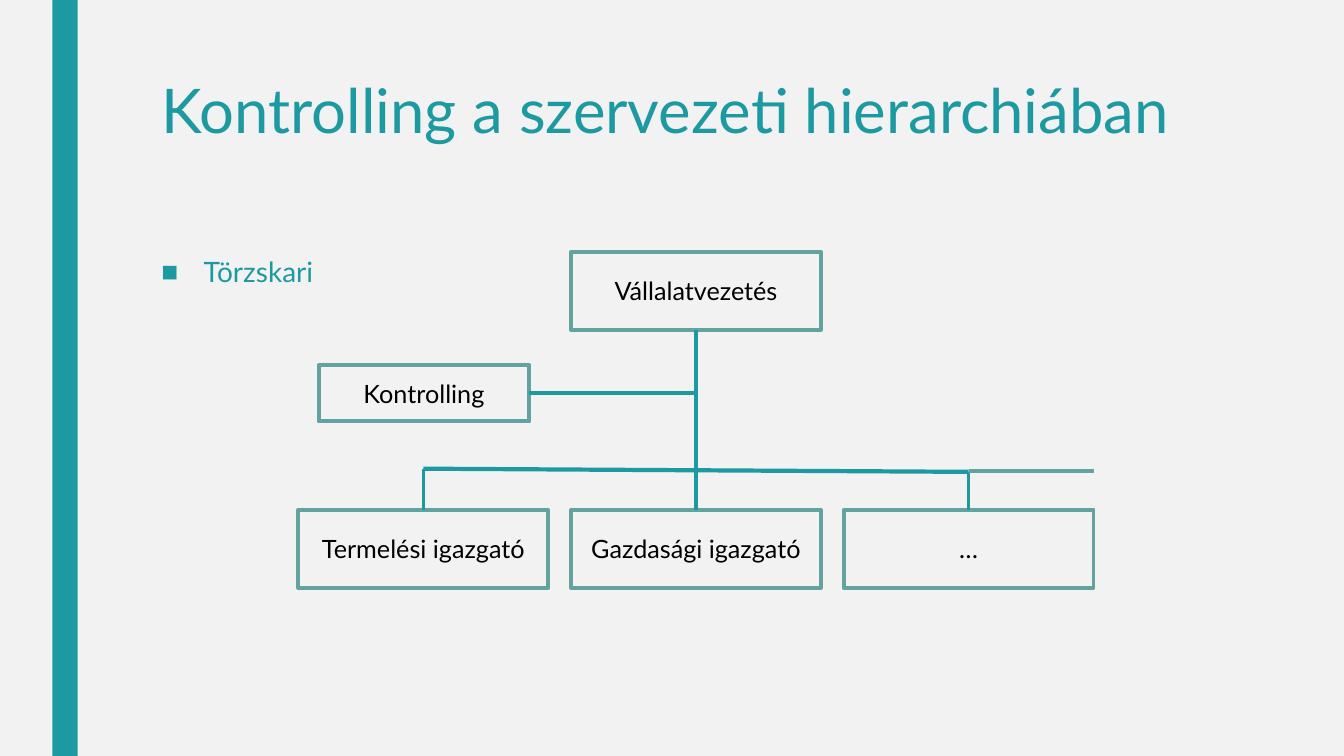
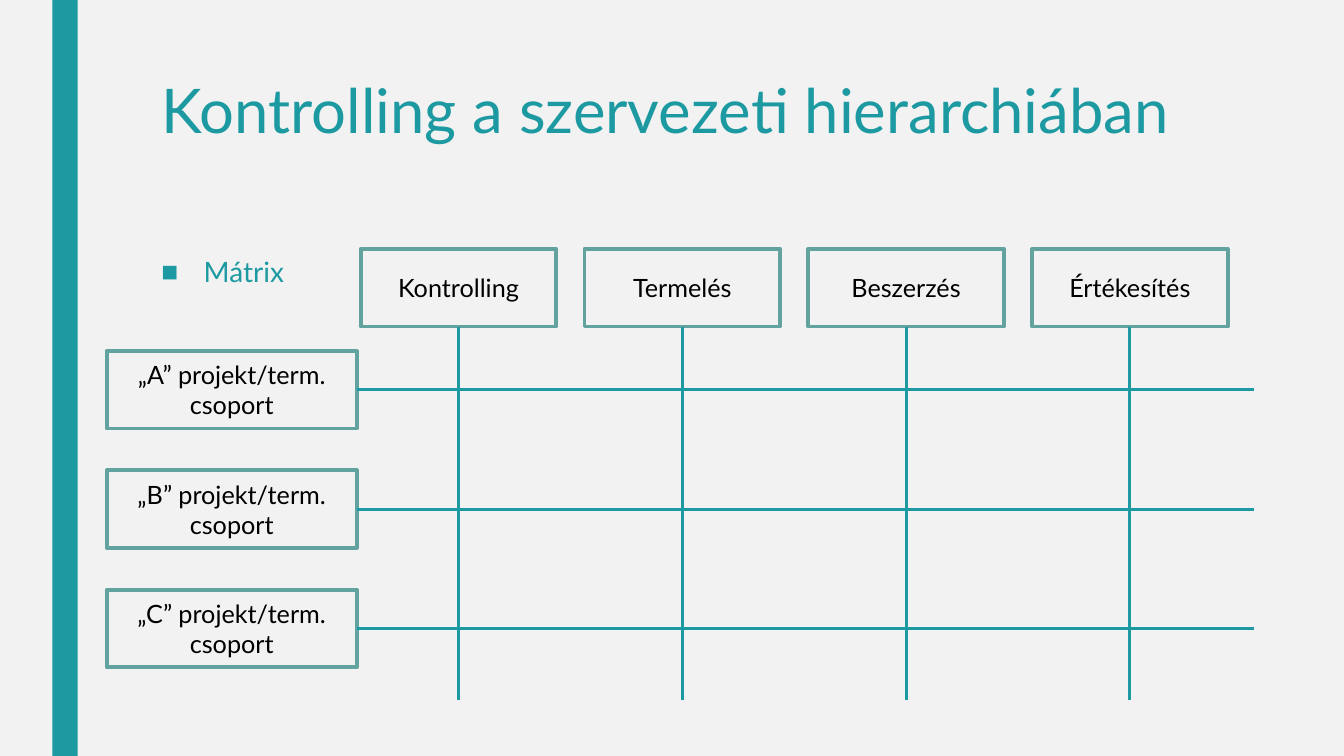
from dataclasses import dataclass

import lxml.etree
import pptx
import pptx.dml.color
import pptx.enum.shapes
import pptx.enum.text
import pptx.oxml.ns
import pptx.util

Cm = pptx.util.Cm
Pt = pptx.util.Pt
ANCHOR = pptx.enum.text.MSO_ANCHOR
ALIGN = pptx.enum.text.PP_ALIGN
TOP, BOTTOM, RIGHT = 0, 2, 3


@dataclass(frozen=True)
class Theme:
    font: str = "Lato"
    background: str = "F2F2F2"
    accent: str = "1D9AA1"
    outline: str = "62A39F"
    ink: str = "000000"
    title_size: float = 44
    body_size: float = 20
    box_size: float = 18
    outline_width: float = 2.75
    trunk_width: float = 3
    branch_width: float = 2.25


THEME = Theme()

TITLE = "Kontrolling a szervezeti hierarchiában"
TITLE_AREA = (3.81, 1.9, 26.67, 4.11)
BODY_AREA = (3.81, 6.35, 26.67, 9.95)
BAND_AREA = (1.32, 0, 0.64, 19.05)
BOX_WIDTH, BOX_HEIGHT = 6.3, 1.96

STAFF = {
    "bullet": "Törzskari",
    "head": ("Vállalatvezetés", (14.39, 6.35, BOX_WIDTH, BOX_HEIGHT)),
    "staff": ("Kontrolling", (8.03, 9.2, 5.31, 1.42)),
    "directors": ["Termelési igazgató", "Gazdasági igazgató", "…"],
    "left": 7.52, "top": 12.85, "pitch": 6.87,
    "bus": ((10.67, 11.81), (24.41, 11.89)),
    "stub": ((24.41, 11.86), (27.56, 11.86)),
}

MATRIX = {
    "bullet": "Mátrix",
    "bullet_area": (3.81, 6.35, 4.8, 1.45),
    "functions": ["Kontrolling", "Termelés", "Beszerzés", "Értékesítés"],
    "function_left": 9.09, "function_top": 6.27,
    "function_pitch": 5.64, "function_width": 4.93,
    "projects": [f"„{letter}” projekt/term. csoport" for letter in "ABC"],
    "project_left": 2.69, "project_top": 8.84, "project_pitch": 3.01,
    "right": 31.6, "bottom": 17.65,
}


def rgb(value):
    return pptx.dml.color.RGBColor.from_string(value)


def place(part, area):
    part.left, part.top, part.width, part.height = (Cm(v) for v in area)


def style_font(paragraph, size, color):
    paragraph.font.name = THEME.font
    paragraph.font.size = Pt(size)
    paragraph.font.color.rgb = rgb(color)


def add_rectangle(slide, area):
    rectangle = slide.shapes.add_shape(
        pptx.enum.shapes.MSO_SHAPE.RECTANGLE, *(Cm(v) for v in area))
    rectangle.shadow.inherit = False
    return rectangle


def add_unit(slide, label, area):
    unit = add_rectangle(slide, area)
    unit.fill.background()
    unit.line.color.rgb = rgb(THEME.outline)
    unit.line.width = Pt(THEME.outline_width)
    frame = unit.text_frame
    frame.word_wrap = True
    frame.vertical_anchor = ANCHOR.MIDDLE
    frame.text = label
    frame.paragraphs[0].alignment = ALIGN.CENTER
    style_font(frame.paragraphs[0], THEME.box_size, THEME.ink)
    return unit


def site(unit, side):
    x, y = {TOP: (0.5, 0), BOTTOM: (0.5, 1), RIGHT: (1, 0.5)}[side]
    return (pptx.util.Emu(unit.left + int(unit.width * x)).cm,
            pptx.util.Emu(unit.top + int(unit.height * y)).cm)


def add_link(slide, start, end, width, color=THEME.accent, begin=None, finish=None):
    link = slide.shapes.add_connector(
        pptx.enum.shapes.MSO_CONNECTOR.STRAIGHT, *(Cm(v) for v in (*start, *end)))
    if begin:
        link.begin_connect(*begin)
    if finish:
        link.end_connect(*finish)
    link.line.color.rgb = rgb(color)
    link.line.width = Pt(width)
    lxml.etree.SubElement(link.element.spPr, pptx.oxml.ns.qn("a:effectLst"))


def add_bullet(paragraph):
    qn = pptx.oxml.ns.qn
    properties = paragraph._p.get_or_add_pPr()
    properties.set("marL", str(Cm(1.07)))
    properties.set("indent", str(-Cm(1.07)))
    color = lxml.etree.SubElement(properties, qn("a:buClr"))
    lxml.etree.SubElement(color, qn("a:srgbClr"), val=THEME.accent)
    lxml.etree.SubElement(properties, qn("a:buFont"), typeface="Arial")
    lxml.etree.SubElement(properties, qn("a:buChar"), char="■")


def prepare_layout(prs):
    background = prs.slide_master.background.fill
    background.solid()
    background.fore_color.rgb = rgb(THEME.background)
    layout = prs.slide_layouts[1]
    title, body = list(layout.placeholders)[:2]
    for part, area in ((title, TITLE_AREA), (body, BODY_AREA)):
        place(part, area)
        part.text_frame.vertical_anchor = ANCHOR.TOP
    return layout


def move_band_to_master(prs, slide):
    band = add_rectangle(slide, BAND_AREA)
    band.fill.solid()
    band.fill.fore_color.rgb = rgb(THEME.accent)
    band.line.fill.background()
    band.element.nvSpPr.cNvPr.set("id", "20")
    prs.slide_master.element.cSld.spTree.insert(2, band.element)


def add_slide(prs, layout, bullet, bullet_area=None):
    slide = prs.slides.add_slide(layout)
    title, body = slide.shapes.title, slide.placeholders[1]
    if bullet_area:
        place(body, bullet_area)
    for part, text in ((title, TITLE), (body, bullet)):
        part.text_frame.text = text
        part.text_frame.auto_size = pptx.enum.text.MSO_AUTO_SIZE.NONE
    heading, item = title.text_frame.paragraphs[0], body.text_frame.paragraphs[0]
    heading.alignment = ALIGN.LEFT
    heading.line_spacing = 0.89
    style_font(heading, THEME.title_size, THEME.accent)
    item.line_spacing = 0.94
    item.space_before = Pt(10)
    item.space_after = Pt(2)
    add_bullet(item)
    style_font(item, THEME.body_size, THEME.accent)
    return slide


def build_staff(slide):
    head = add_unit(slide, *STAFF["head"])
    staff = add_unit(slide, *STAFF["staff"])
    production, finance, other = [
        add_unit(slide, label, (STAFF["left"] + i * STAFF["pitch"], STAFF["top"],
                                BOX_WIDTH, BOX_HEIGHT))
        for i, label in enumerate(STAFF["directors"])]
    trunk_x = site(head, BOTTOM)[0]
    staff_end = site(staff, RIGHT)
    add_link(slide, site(head, BOTTOM), site(finance, TOP), THEME.trunk_width,
             begin=(head, BOTTOM), finish=(finance, TOP))
    add_link(slide, staff_end, (trunk_x, staff_end[1]), THEME.trunk_width,
             begin=(staff, RIGHT))
    add_link(slide, *STAFF["bus"], THEME.trunk_width)
    for director, bus_end in zip((production, other), STAFF["bus"]):
        target = site(director, TOP)
        add_link(slide, (target[0], bus_end[1]), target, THEME.branch_width,
                 finish=(director, TOP))
    add_link(slide, *STAFF["stub"], THEME.outline_width, THEME.outline)


def build_matrix(slide):
    for i, label in enumerate(MATRIX["functions"]):
        left = MATRIX["function_left"] + i * MATRIX["function_pitch"]
        unit = add_unit(slide, label, (left, MATRIX["function_top"],
                                       MATRIX["function_width"], BOX_HEIGHT))
        start = site(unit, BOTTOM)
        add_link(slide, start, (start[0], MATRIX["bottom"]), THEME.branch_width,
                 begin=(unit, BOTTOM))
    for i, label in enumerate(MATRIX["projects"]):
        top = MATRIX["project_top"] + i * MATRIX["project_pitch"]
        unit = add_unit(slide, label, (MATRIX["project_left"], top,
                                       BOX_WIDTH, BOX_HEIGHT))
        start = site(unit, RIGHT)
        add_link(slide, start, (MATRIX["right"], start[1]), THEME.branch_width,
                 begin=(unit, RIGHT))


def main():
    prs = pptx.Presentation()
    prs.slide_width, prs.slide_height = Cm(33.87), Cm(19.05)
    layout = prepare_layout(prs)
    staff_slide = add_slide(prs, layout, STAFF["bullet"])
    move_band_to_master(prs, staff_slide)
    build_staff(staff_slide)
    build_matrix(add_slide(prs, layout, MATRIX["bullet"], MATRIX["bullet_area"]))
    prs.save("out.pptx")


if __name__ == "__main__":
    main()
